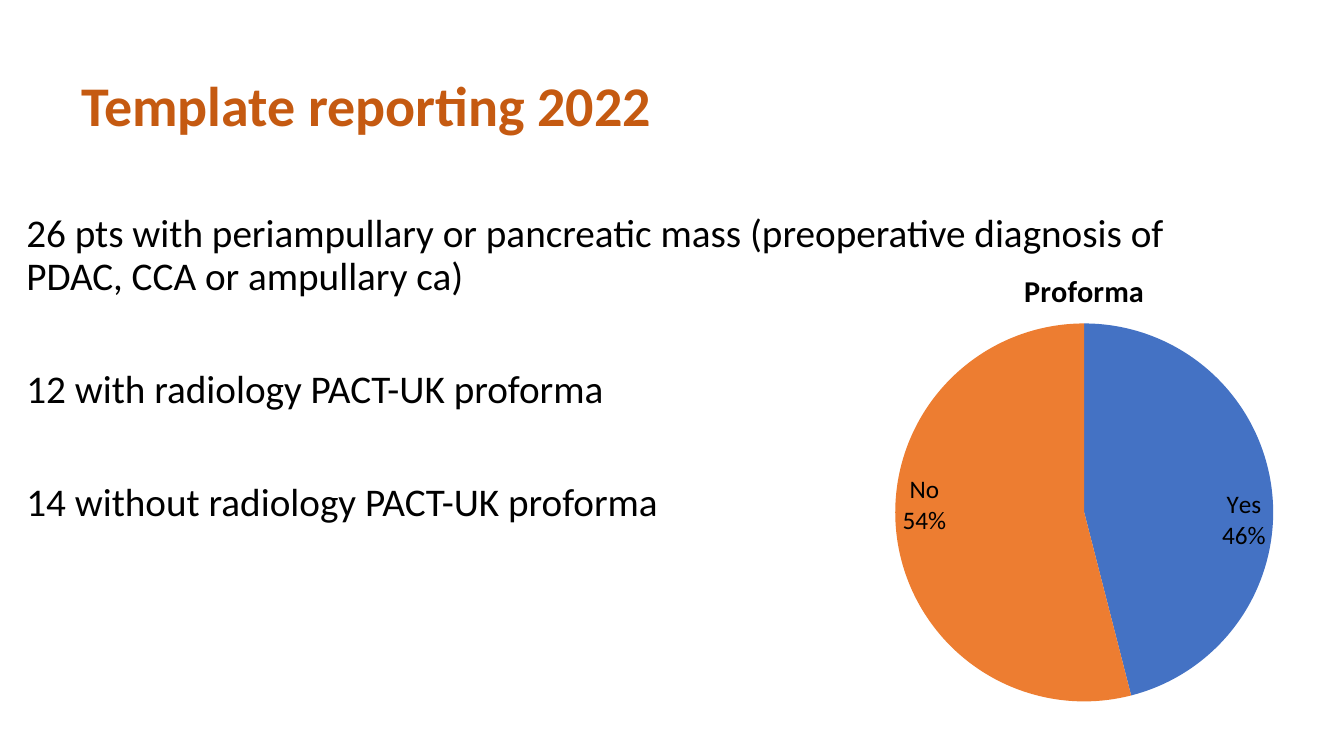
from lxml import etree
from pptx import Presentation
from pptx import util as u
from pptx.chart import data
from pptx.dml.color import RGBColor
from pptx.enum import chart as charts
from pptx.enum import text
from pptx.oxml import ns

FONT = "Calibri"
RUST = RGBColor(0xC5, 0x5A, 0x11)
BLACK = RGBColor(0, 0, 0)
BLUE = RGBColor(0x44, 0x72, 0xC4)
ORANGE = RGBColor(0xED, 0x7D, 0x31)

FINDINGS = [
    "26 pts with periampullary or pancreatic mass (preoperative diagnosis of PDAC, CCA or ampullary ca)",
    "12 with radiology PACT-UK proforma",
    "14 without radiology PACT-UK proforma",
]
PROFORMA_USE = {"Yes": (46, BLUE), "No": (54, ORANGE)}


def place(box, left, top, width, height):
    """Position a placeholder, with lengths in centimetres."""
    box.left, box.top = u.Cm(left), u.Cm(top)
    box.width, box.height = u.Cm(width), u.Cm(height)


def style_font(font, size, color, bold=False):
    """Apply the slide typeface with a size, colour and weight."""
    font.name, font.size, font.bold = FONT, u.Pt(size), bold
    font.color.rgb = color


def fill_text(box, lines, size, color, bold=False, gap=0):
    """Write left-aligned paragraphs without bullets into a placeholder."""
    frame = box.text_frame
    frame.text = "\n".join(lines)
    frame.word_wrap = True
    frame.auto_size = text.MSO_AUTO_SIZE.NONE
    frame.vertical_anchor = text.MSO_ANCHOR.TOP
    for index, para in enumerate(frame.paragraphs):
        para.alignment = text.PP_ALIGN.LEFT
        para.line_spacing = 0.9
        para.space_before = u.Pt(gap if index else 0)
        properties = para._p.get_or_add_pPr()
        properties.set("marL", "0")
        properties.set("indent", "0")
        etree.SubElement(properties, ns.qn("a:buNone"))
        for span in para.runs:
            style_font(span.font, size, color, bold)


def set_plot_area(chart, **fractions):
    """Fix the inner plot area as fractions of the chart."""
    area = chart._chartSpace.find(".//" + ns.qn("c:plotArea"))
    layout = area.find(ns.qn("c:layout"))
    if layout is None:
        layout = etree.Element(ns.qn("c:layout"))
        area.insert(0, layout)
    manual = etree.SubElement(layout, ns.qn("c:manualLayout"))
    settings = {"layoutTarget": "inner", "xMode": "edge", "yMode": "edge", **fractions}
    for name, value in settings.items():
        etree.SubElement(manual, ns.qn("c:" + name)).set("val", str(value))


def label_slices(plot):
    """Show category and percentage on two lines inside each slice."""
    plot.has_data_labels = True
    labels = plot.data_labels
    style_font(labels.font, 18, BLACK)
    labels.number_format, labels.number_format_is_linked = "0%", False
    labels.position = charts.XL_LABEL_POSITION.INSIDE_END
    labels.show_category_name = labels.show_percentage = True
    labels.show_value = False
    separator = etree.Element(ns.qn("c:separator"))
    separator.text = "\n"
    labels._element.find(ns.qn("c:showBubbleSize")).addnext(separator)


def add_pie(page, title, slices, left, top, width, height):
    """Add a titled pie chart with one colour per slice."""
    pie_data = data.CategoryChartData()
    pie_data.categories = list(slices)
    pie_data.add_series(title, [value for value, color in slices.values()])
    chart = page.shapes.add_chart(
        charts.XL_CHART_TYPE.PIE, u.Cm(left), u.Cm(top), u.Cm(width), u.Cm(height), pie_data
    ).chart
    style_font(chart.font, 18, BLACK)
    chart.has_legend = False
    chart.has_title = True
    chart.chart_title.include_in_layout = False
    heading = chart.chart_title.text_frame
    heading.text = title
    style_font(heading.paragraphs[0].runs[0].font, 21.6, BLACK, bold=True)
    plot = chart.plots[0]
    plot.vary_by_categories = True
    for index, (value, color) in enumerate(slices.values()):
        fill = plot.series[0].points[index].format.fill
        fill.solid()
        fill.fore_color.rgb = color
    label_slices(plot)
    set_plot_area(chart, x=0.11, y=0.16, w=0.78, h=0.81)


def main():
    """Build and save the template reporting slide."""
    deck = Presentation()
    deck.slide_width, deck.slide_height = u.Cm(33.87), u.Cm(19.05)
    page = deck.slides.add_slide(deck.slide_layouts[1])
    title, body = page.placeholders
    place(title, 1.8, 1.85, 29.2, 3)
    fill_text(title, ["Template reporting 2022"], 40, RUST, bold=True)
    place(body, 0.41, 5.26, 31.12, 11.9)
    fill_text(body, FINDINGS, 28, BLACK, gap=50.5)
    add_pie(page, "Proforma", PROFORMA_USE, 21.2, 6.27, 12.25, 11.76)
    deck.save("out.pptx")


if __name__ == "__main__":
    main()
